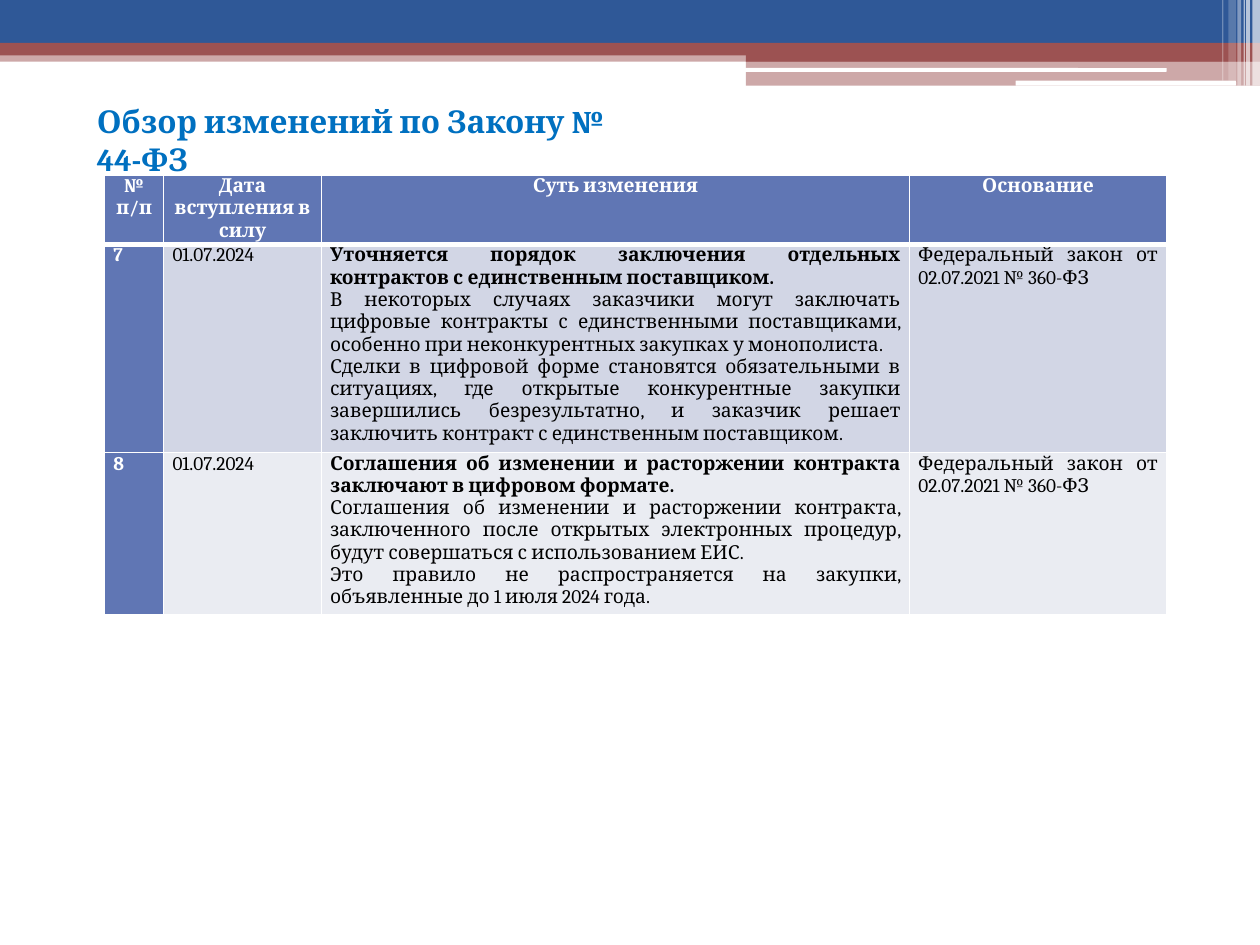
from dataclasses import dataclass

from lxml import etree
from pptx import Presentation
from pptx.dml.color import RGBColor
from pptx.enum import shapes, text
from pptx.oxml import ns
from pptx.util import Inches, Pt


@dataclass(frozen=True)
class Theme:
    font: str = "Cambria"
    title_size: int = 18
    table_size: int = 11
    title: str = "0070C0"
    blue: str = "2F5897"
    red: str = "9C5252"
    white: str = "FFFFFF"
    black: str = "000000"
    heading: str = "6076B4"
    bands: tuple = ("D2D6E5", "EAECF2")


THEME = Theme()
RECTANGLE = shapes.MSO_SHAPE.RECTANGLE
ROUNDED = shapes.MSO_SHAPE.ROUNDED_RECTANGLE

# left, top, width, height, colour, opacity in percent, preset
BANNER_PARTS = [
    (0, 0.4, 10, 0.09, THEME.red, 50, RECTANGLE),
    (0, 0, 10, 0.34, THEME.blue, 100, RECTANGLE),
    (0, 0.34, 10, 0.1, THEME.red, 100, RECTANGLE),
    (5.92, 0.39, 4.08, 0.1, THEME.red, 100, RECTANGLE),
    (5.92, 0.48, 4.08, 0.2, THEME.red, 50, RECTANGLE),
    (5.91, 0.54, 3.35, 0.03, THEME.white, 100, ROUNDED),
    (8.06, 0.64, 1.75, 0.04, THEME.white, 100, ROUNDED),
]
# left, width, height, opacity in percent
BANNER_STRIPES = [
    (9.94, 0.06, 0.68, 65), (9.89, 0.03, 0.68, 65), (9.87, 0.01, 0.68, 60),
    (9.82, 0.03, 0.68, 40), (9.75, 0.06, 0.64, 20), (9.7, 0.01, 0.64, 30),
]

COLUMN_WIDTHS = [0.47, 1.25, 4.67, 2.04]
ROW_HEIGHTS = [0.55, 1.65, 1.28]
HEADINGS = ["№ п/п", "Дата вступления в силу", "Суть изменения", "Основание"]
CHANGES = [
    ("7", "01.07.2024", [
        "Уточняется порядок заключения отдельных контрактов с единственным поставщиком.",
        "В некоторых случаях заказчики могут заключать цифровые контракты с единственными "
        "поставщиками, особенно при неконкурентных закупках у монополиста. ",
        "Сделки в цифровой форме становятся обязательными в ситуациях, где открытые "
        "конкурентные закупки завершились безрезультатно, и заказчик решает заключить "
        "контракт с единственным поставщиком.",
    ], "Федеральный закон от 02.07.2021 № 360-ФЗ"),
    ("8", "01.07.2024", [
        "Соглашения об изменении и расторжении контракта заключают в цифровом формате.",
        "Соглашения об изменении и расторжении контракта, заключенного после открытых "
        "электронных процедур, будут совершаться с использованием ЕИС. ",
        "Это правило не распространяется на закупки, объявленные до 1 июля 2024 года.",
    ], "Федеральный закон от 02.07.2021 № 360-ФЗ"),
]


def add_run(paragraph, words, size, color, bold):
    run = paragraph.add_run()
    run.text = words
    run.font.name = THEME.font
    run.font.size = Pt(size)
    run.font.bold = bold
    run.font.color.rgb = RGBColor.from_string(color)


def add_block(slide, left, top, width, height, color, opacity, preset):
    shape = slide.shapes.add_shape(
        preset, Inches(left), Inches(top), Inches(width), Inches(height))
    shape.shadow.inherit = False
    shape.line.fill.background()
    shape.fill.solid()
    shape.fill.fore_color.rgb = RGBColor.from_string(color)
    if opacity < 100:
        rgb = shape.fill._xPr.find(".//" + ns.qn("a:srgbClr"))
        etree.SubElement(rgb, ns.qn("a:alpha"), val=str(opacity * 1000))


def add_banner(slide, left, top):
    stripes = [(x, 0, width, height, THEME.white, opacity, RECTANGLE)
               for x, width, height, opacity in BANNER_STRIPES]
    for x, y, *rest in BANNER_PARTS + stripes:
        add_block(slide, left + x, top + y, *rest)


def add_title(slide, left, top, width, height):
    box = slide.shapes.add_textbox(
        Inches(left), Inches(top), Inches(width), Inches(height))
    box.text_frame.word_wrap = True
    add_run(box.text_frame.paragraphs[0], "Обзор изменений по Закону № 44-ФЗ",
            THEME.title_size, THEME.title, True)


def set_borders(cell, top, bottom):
    """Draw white cell borders; top and bottom are widths in points."""
    properties = cell._tc.get_or_add_tcPr()
    for side, width in (("L", 1), ("R", 1), ("T", top), ("B", bottom)):
        line = etree.SubElement(properties, ns.qn(f"a:ln{side}"), w=str(Pt(width)))
        fill = etree.SubElement(line, ns.qn("a:solidFill"))
        etree.SubElement(fill, ns.qn("a:srgbClr"), val=THEME.white)


def fill_cell(cell, paragraphs, row, column):
    is_header = row == 0
    is_heading = is_header or column == 0
    set_borders(cell, top=3 if row == 1 else 1, bottom=3 if is_header else 1)
    cell.fill.solid()
    cell.fill.fore_color.rgb = RGBColor.from_string(
        THEME.heading if is_heading else THEME.bands[(row - 1) % 2])
    cell.margin_left = cell.margin_right = Inches(0.07)
    cell.margin_top = cell.margin_bottom = 0
    frame = cell.text_frame
    for index, words in enumerate(paragraphs):
        paragraph = frame.add_paragraph() if index else frame.paragraphs[0]
        paragraph.alignment = text.PP_ALIGN.CENTER if is_header else text.PP_ALIGN.JUSTIFY
        is_lead = len(paragraphs) > 1 and index == 0
        add_run(paragraph, words, THEME.table_size,
                THEME.white if is_heading else THEME.black, is_heading or is_lead)


def add_changes_table(slide, left, top, width, height):
    rows = [HEADINGS, *CHANGES]
    table = slide.shapes.add_table(
        len(rows), len(HEADINGS), Inches(left), Inches(top),
        Inches(width), Inches(height)).table
    for column, column_width in zip(table.columns, COLUMN_WIDTHS):
        column.width = Inches(column_width)
    for row, row_height in zip(table.rows, ROW_HEIGHTS):
        row.height = Inches(row_height)
    for row, values in enumerate(rows):
        for column, value in enumerate(values):
            paragraphs = value if isinstance(value, list) else [value]
            fill_cell(table.cell(row, column), paragraphs, row, column)


def main():
    presentation = Presentation()
    presentation.slide_width = Inches(10)
    presentation.slide_height = Inches(7.5)
    slide = presentation.slides.add_slide(presentation.slide_layouts[6])
    add_banner(slide, 0, 0)
    add_title(slide, 0.67, 0.76, 4.51, 0.4)
    add_changes_table(slide, 0.83, 1.39, sum(COLUMN_WIDTHS), sum(ROW_HEIGHTS))
    presentation.save("out.pptx")


if __name__ == "__main__":
    main()
